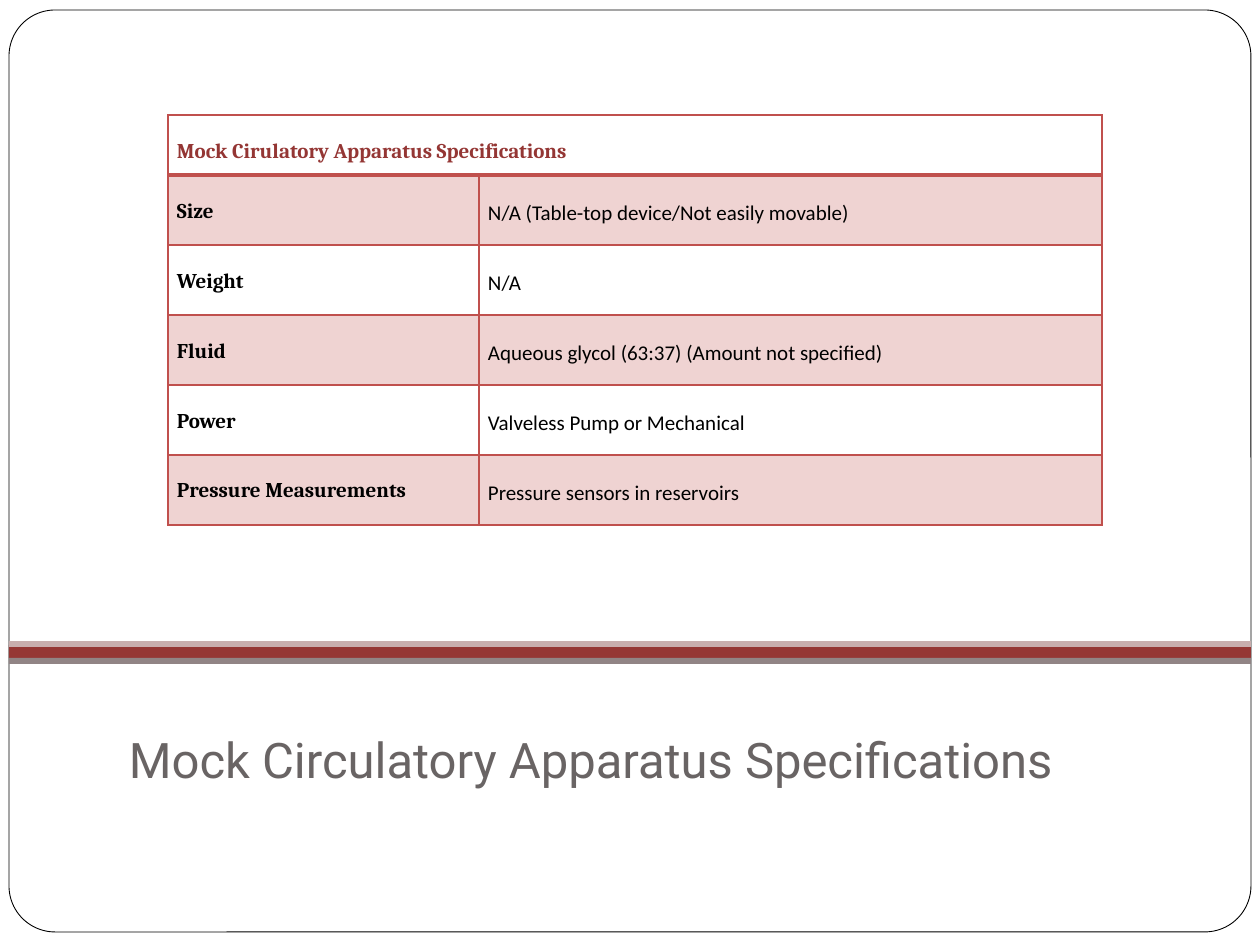
"""Build the mock circulatory apparatus specifications slide."""
import lxml.etree
import pptx
import pptx.dml.color
import pptx.enum.shapes
import pptx.enum.text
import pptx.oxml.ns
import pptx.util
from dataclasses import dataclass


@dataclass(frozen=True)
class Theme:
    white: str = "FFFFFF"
    black: str = "000000"
    title: str = "696464"
    band: str = "953735"
    band_above: str = "C8AEAE"
    band_below: str = "918485"
    heading: str = "943634"
    border: str = "C0504D"
    stripe: str = "EFD3D2"
    title_size: int = 28
    table_size: int = 12


theme = Theme()
rgb = pptx.dml.color.RGBColor.from_string
SCALE = 914400 / 126


def px(*lengths):
    return [round(length * SCALE) for length in lengths]


def write(frame, text, font, size, color, bold=False, spacing=1.0):
    para = frame.paragraphs[0]
    para.alignment = pptx.enum.text.PP_ALIGN.LEFT
    para.line_spacing = spacing
    span = para.add_run()
    span.text = text
    span.font.name = font
    span.font.size = pptx.util.Pt(size)
    span.font.bold = bold
    span.font.color.rgb = rgb(color)


deck = pptx.Presentation()
deck.slide_width, deck.slide_height = px(1260, 945)
page = deck.slides.add_slide(deck.slide_layouts[5])

shape_kinds = pptx.enum.shapes.MSO_SHAPE
panel = page.shapes.add_shape(shape_kinds.ROUNDED_RECTANGLE, *px(9, 10, 1242, 922))
panel.adjustments[0] = 0.05
panel.shadow.inherit = False
panel.fill.solid()
panel.fill.fore_color.rgb = rgb(theme.white)
panel.line.color.rgb = rgb(theme.black)
panel.line.width = pptx.util.Pt(0.5)

for top, height, color in [
    (645, 13, theme.band),
    (641, 6, theme.band_above),
    (658, 6, theme.band_below),
]:
    band = page.shapes.add_shape(shape_kinds.RECTANGLE, *px(9, top, 1242, height))
    band.shadow.inherit = False
    band.fill.solid()
    band.fill.fore_color.rgb = rgb(color)
    band.line.fill.background()

title = page.shapes.title
page.shapes.element.append(title.element)
title.left, title.top, title.width, title.height = px(116, 726, 1008, 72)
frame = title.text_frame
frame.word_wrap = True
frame.auto_size = pptx.enum.text.MSO_AUTO_SIZE.NONE
frame.vertical_anchor = pptx.enum.text.MSO_ANCHOR.MIDDLE
frame.margin_left, frame.margin_top, frame.margin_right, frame.margin_bottom = px(13, 6, 13, 13)
write(frame, "Mock Circulatory Apparatus Specifications", "Roboto", theme.title_size, theme.title)

rows = [
    ("Mock Cirulatory Apparatus Specifications", ""),
    ("Size", "N/A (Table-top device/Not easily movable)"),
    ("Weight", "N/A"),
    ("Fluid", "Aqueous glycol (63:37) (Amount not specified)"),
    ("Power", "Valveless Pump or Mechanical"),
    ("Pressure Measurements", "Pressure sensors in reservoirs"),
]
heights = px(60, *[70] * (len(rows) - 1))
box = page.shapes.add_table(len(rows), 2, *px(168, 115, 934, 410))
table = box.table
table.first_row = False
table.horz_banding = False
for column, width in zip(table.columns, px(311, 623)):
    column.width = width

for row_index, texts in enumerate(rows):
    table.rows[row_index].height = heights[row_index]
    for column_index, text in enumerate(texts):
        cell = table.cell(row_index, column_index)
        cell.margin_left, cell.margin_top, cell.margin_right, cell.margin_bottom = px(9, 0, 9, 0)
        if row_index % 2:
            cell.fill.solid()
            cell.fill.fore_color.rgb = rgb(theme.stripe)
        else:
            cell.fill.background()
        if text:
            label = column_index == 0
            write(
                cell.text_frame,
                text,
                "Cambria" if label else "Calibri",
                theme.table_size,
                theme.black if row_index else theme.heading,
                bold=label,
                spacing=2.0,
            )
        properties = cell._tc.get_or_add_tcPr()
        for place, side in enumerate("LRTB"):
            thick = (row_index, side) in [(0, "B"), (1, "T")]
            line = lxml.etree.Element(pptx.oxml.ns.qn(f"a:ln{side}"))
            line.set("w", str(pptx.util.Pt(2.25 if thick else 1)))
            fill = lxml.etree.SubElement(line, pptx.oxml.ns.qn("a:solidFill"))
            lxml.etree.SubElement(fill, pptx.oxml.ns.qn("a:srgbClr"), val=theme.border)
            properties.insert(place, line)
table.cell(0, 0).merge(table.cell(0, 1))

deck.save("out.pptx")
